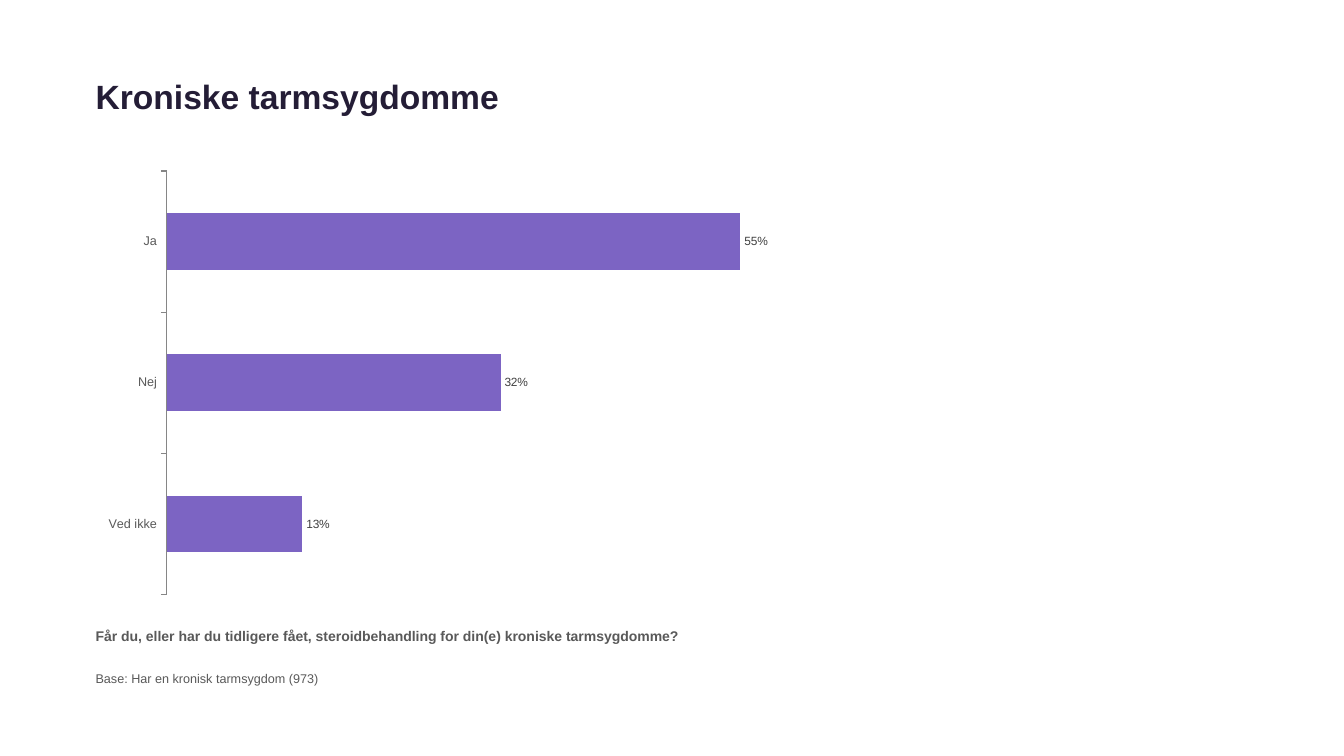
from lxml.etree import SubElement
from pptx import Presentation
from pptx.chart.data import CategoryChartData
from pptx.dml.color import RGBColor
from pptx.enum.chart import XL_CHART_TYPE, XL_LABEL_POSITION, XL_TICK_LABEL_POSITION, XL_TICK_MARK
from pptx.oxml.ns import qn
from pptx.util import Cm, Pt

FONT = "Arial"
NAVY = RGBColor(0x24, 0x1D, 0x36)
GRAY = RGBColor(0x59, 0x59, 0x59)
DARK_GRAY = RGBColor(0x40, 0x40, 0x40)
AXIS_GRAY = RGBColor(0x86, 0x86, 0x86)
PURPLE = RGBColor(0x7C, 0x64, 0xC3)
LEFT = Cm(2.16)
TEXT_WIDTH = Cm(29.54)
ANSWERS = {"Ved ikke": 0.13, "Nej": 0.32, "Ja": 0.55}
PLOT_AREA = {"x": 0.07, "y": 0.02, "w": 0.9, "h": 0.97}


def style_font(font, size, color, bold=False):
    font.name = FONT
    font.size = Pt(size)
    font.color.rgb = color
    font.bold = bold


def add_text(page, text, top, height, size, color, bold=False):
    box = page.shapes.add_textbox(LEFT, top, TEXT_WIDTH, height)
    frame = box.text_frame
    frame.word_wrap = True
    frame.text = text
    style_font(frame.paragraphs[0].runs[0].font, size, color, bold)


def place_plot(chart):
    plot_area = chart._chartSpace.chart.plotArea
    layout = plot_area.find(qn("c:layout"))
    if layout is None:
        layout = SubElement(plot_area, qn("c:layout"))
        plot_area.insert(0, layout)
    manual = SubElement(layout, qn("c:manualLayout"))
    SubElement(manual, qn("c:layoutTarget")).set("val", "inner")
    for side in ("x", "y"):
        SubElement(manual, qn(f"c:{side}Mode")).set("val", "edge")
    for side, share in PLOT_AREA.items():
        SubElement(manual, qn(f"c:{side}")).set("val", str(share))


def style_axes(chart):
    answers = chart.category_axis
    answers.has_major_gridlines = False
    answers.major_tick_mark = XL_TICK_MARK.OUTSIDE
    answers.tick_label_position = XL_TICK_LABEL_POSITION.LOW
    answers.format.line.color.rgb = AXIS_GRAY
    answers.format.line.width = Pt(0.75)
    style_font(answers.tick_labels.font, 9, GRAY)

    shares = chart.value_axis
    shares.visible = False
    shares.has_major_gridlines = False
    shares.minimum_scale = 0
    shares.maximum_scale = 1
    shares.major_unit = 0.1


def style_bars(plot):
    plot.vary_by_categories = False
    plot.gap_width = 150
    plot.overlap = -10
    fill = plot.series[0].format.fill
    fill.solid()
    fill.fore_color.rgb = PURPLE

    labels = plot.series[0].data_labels
    labels.show_value = True
    labels.position = XL_LABEL_POSITION.OUTSIDE_END
    labels.number_format = "0%"
    labels.number_format_is_linked = False
    style_font(labels.font, 8.5, DARK_GRAY)


def add_bar_chart(page):
    data = CategoryChartData(number_format="0%")
    data.categories = list(ANSWERS)
    data.add_series("Series 1", list(ANSWERS.values()))
    chart = page.shapes.add_chart(
        XL_CHART_TYPE.BAR_CLUSTERED, LEFT, Cm(4.09), Cm(29.21), Cm(11), data
    ).chart
    chart.has_legend = False
    chart.has_title = False
    chart.font.name = FONT
    chart.font.size = Pt(18)
    style_axes(chart)
    style_bars(chart.plots[0])
    place_plot(chart)


def main():
    deck = Presentation()
    deck.slide_width = Cm(33.87)
    deck.slide_height = Cm(19.05)
    page = deck.slides.add_slide(deck.slide_layouts[6])
    add_text(page, "Kroniske tarmsygdomme", Cm(1.8), Cm(1.27), 24, NAVY, True)
    add_bar_chart(page)
    add_text(
        page,
        "Får du, eller har du tidligere fået, steroidbehandling for din(e) kroniske tarmsygdomme?",
        Cm(15.7), Cm(1.09), 10, GRAY, True,
    )
    add_text(page, "Base: Har en kronisk tarmsygdom (973)", Cm(16.79), Cm(0.71), 9, GRAY)
    deck.save("out.pptx")


if __name__ == "__main__":
    main()
